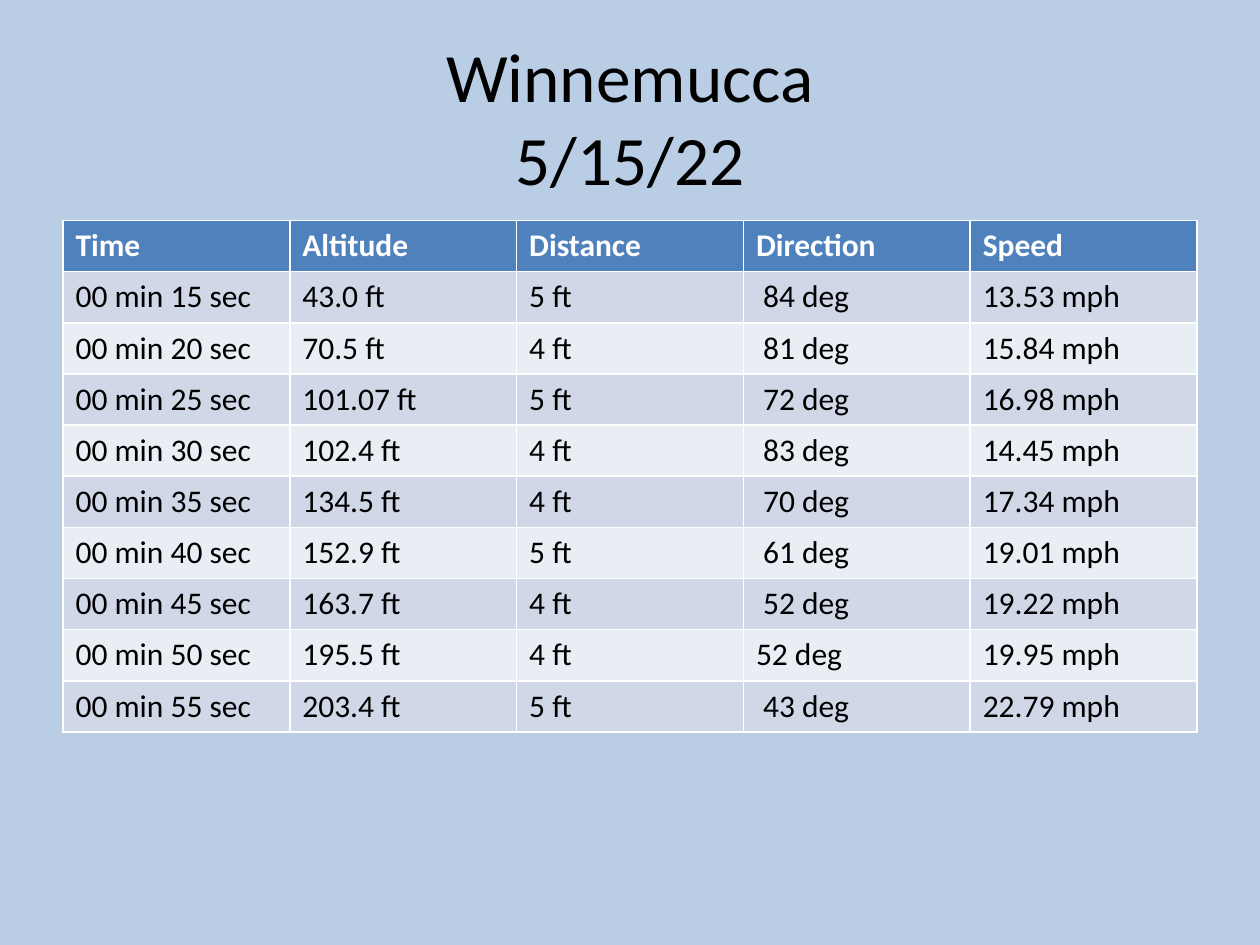
from pptx import Presentation
from pptx.dml.color import RGBColor as RGB
from pptx.enum.text import MSO_ANCHOR as Anchor, PP_ALIGN as Align
from pptx.util import Inches, Pt

# Content
TITLE = "Winnemucca\v5/15/22"
HEAD = ("Time", "Altitude", "Distance", "Direction", "Speed")
LOG = [
    ("00 min 15 sec", "43.0 ft", "5 ft", " 84 deg", "13.53 mph"),
    ("00 min 20 sec", "70.5 ft", "4 ft", " 81 deg", "15.84 mph"),
    ("00 min 25 sec", "101.07 ft", "5 ft", " 72 deg", "16.98 mph"),
    ("00 min 30 sec", "102.4 ft", "4 ft", " 83 deg", "14.45 mph"),
    ("00 min 35 sec", "134.5 ft", "4 ft", " 70 deg", "17.34 mph"),
    ("00 min 40 sec", "152.9 ft", "5 ft", " 61 deg", "19.01 mph"),
    ("00 min 45 sec", "163.7 ft", "4 ft", " 52 deg", "19.22 mph"),
    ("00 min 50 sec", "195.5 ft", "4 ft", "52 deg", "19.95 mph"),
    ("00 min 55 sec", "203.4 ft", "5 ft", " 43 deg", "22.79 mph"),
]

# Colours and text formats
SKY = RGB(0xB9, 0xCD, 0xE5)
BLUE = RGB(0x4F, 0x81, 0xBD)
BANDS = RGB(0xD0, 0xD8, 0xE8), RGB(0xE9, 0xED, 0xF4)
BLACK, WHITE = RGB(0, 0, 0), RGB(255, 255, 255)
FONT = "Calibri"
BIG = {"name": FONT, "size": Pt(39.6), "bold": False}
TOP = {"name": FONT, "size": Pt(18), "bold": True}
BODY = {**TOP, "bold": False}

# Layout: one margin on both sides, equal rows
WIDE, HIGH = Inches(10), Inches(7.5)
EDGE = WIDE // 20
SPAN = WIDE - 2 * EDGE
ROW = Inches(4.06) // (len(LOG) + 1)


def style(para, form, color):
    for run in para.runs:
        for key, val in form.items():
            setattr(run.font, key, val)
        run.font.color.rgb = color


deck = Presentation()
deck.slide_width, deck.slide_height = WIDE, HIGH
slide = deck.slides.add_slide(deck.slide_layouts[6])
back = slide.background.fill
back.solid()
back.fore_color.rgb = SKY

# Title
frame = slide.shapes.add_textbox(EDGE, Inches(0.3), SPAN, HIGH // 6).text_frame
frame.word_wrap = True
frame.vertical_anchor = Anchor.MIDDLE
para = frame.paragraphs[0]
para.text = TITLE
para.alignment = Align.CENTER
style(para, BIG, BLACK)

# Flight table: the default style draws the white rules
rows = [HEAD, *LOG]
table = slide.shapes.add_table(
    len(rows), len(HEAD), EDGE, Inches(1.75), SPAN, ROW * len(rows)).table
for r, row in enumerate(rows):
    form, color, fill = (
        (BODY, BLACK, BANDS[(r - 1) % 2]) if r else (TOP, WHITE, BLUE))
    for c, text in enumerate(row):
        cell = table.cell(r, c)
        cell.text = text
        cell.fill.solid()
        cell.fill.fore_color.rgb = fill
        style(cell.text_frame.paragraphs[0], form, color)

deck.save("out.pptx")
